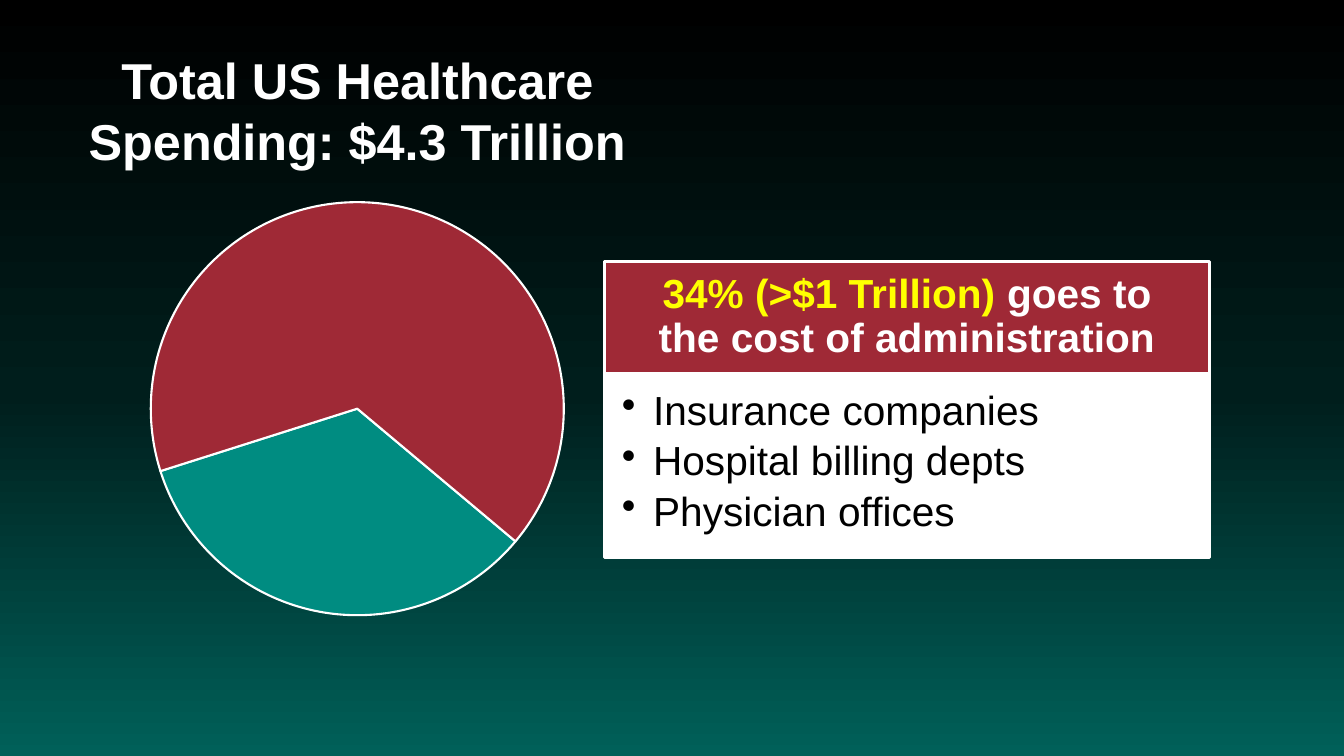
import copy
import pptx
import pptx.chart.data
import pptx.dml.color
import pptx.enum.chart
import pptx.enum.shapes
import pptx.enum.text
import pptx.oxml
import pptx.oxml.ns
import pptx.util
from pptx.util import Cm, Pt

COLORS = {
    "black": "000000",
    "deep_teal": "001E1C",
    "dark_teal": "006059",
    "teal": "008C81",
    "red": "9F2936",
    "yellow": "FFFF00",
    "white": "FFFFFF",
}


def rgb(name):
    return pptx.dml.color.RGBColor.from_string(COLORS[name])


def add_run(paragraph, text, color, size, bold):
    run = paragraph.add_run()
    run.text = text
    font_format = {"name": "Arial", "size": Pt(size), "bold": bold}
    for attribute, value in font_format.items():
        setattr(run.font, attribute, value)
    run.font.color.rgb = rgb(color)


presentation = pptx.Presentation()
presentation.slide_width = Cm(33.87)
presentation.slide_height = Cm(19.05)
slide = presentation.slides.add_slide(presentation.slide_layouts[6])

backdrop = slide.background.fill
backdrop.gradient()
backdrop.gradient_angle = 270
stop_list = slide.element.find(".//" + pptx.oxml.ns.qn("a:gsLst"))
stop_list.append(copy.deepcopy(stop_list[0]))
backdrop_stops = [(0, "black"), (0.52, "deep_teal"), (1, "dark_teal")]
for stop, (position, color) in zip(backdrop.gradient_stops, backdrop_stops):
    stop.position = position
    stop.color.rgb = rgb(color)

spending = pptx.chart.data.CategoryChartData()
spending.categories = ["1", "2"]
spending.add_series("Series 1", (34, 66))
spending_pie = slide.shapes.add_chart(
    pptx.enum.chart.XL_CHART_TYPE.PIE,
    Cm(0.61), Cm(4.75), Cm(16.79), Cm(11.1), spending,
).chart
spending_pie.has_legend = False
spending_pie.has_title = False
spending_pie.font.name = "Calibri"
spending_pie.font.size = Pt(10)
spending_pie.font.color.rgb = rgb("black")
pie_plot = spending_pie.plots[0]
pie_plot.vary_by_categories = False
for index, color in enumerate(["teal", "red"]):
    slice_format = pie_plot.series[0].points[index].format
    slice_format.fill.solid()
    slice_format.fill.fore_color.rgb = rgb(color)
    slice_format.line.color.rgb = rgb("white")
    slice_format.line.width = Pt(1.5)

pie_xml = spending_pie.element.find(".//" + pptx.oxml.ns.qn("c:pieChart"))
first_angle = pptx.oxml.parse_xml(
    f'<c:firstSliceAng {pptx.oxml.ns.nsdecls("c")} val="130"/>')
pie_xml.append(first_angle)
plot_area = pie_xml.getparent()
for old_layout in plot_area.findall(pptx.oxml.ns.qn("c:layout")):
    plot_area.remove(old_layout)
plot_area.insert(0, pptx.oxml.parse_xml(
    f'<c:layout {pptx.oxml.ns.nsdecls("c")}><c:manualLayout>'
    '<c:layoutTarget val="inner"/><c:xMode val="edge"/><c:yMode val="edge"/>'
    '<c:x val="0.19"/><c:y val="0.03"/><c:w val="0.62"/><c:h val="0.94"/>'
    '</c:manualLayout></c:layout>'))

panels = []
for top, height, color in [(6.6, 2.8, "red"), (9.4, 4.64, "white")]:
    panel = slide.shapes.add_shape(
        pptx.enum.shapes.MSO_SHAPE.RECTANGLE,
        Cm(15.24), Cm(top), Cm(15.24), Cm(height))
    panel.shadow.inherit = False
    panel.fill.solid()
    panel.fill.fore_color.rgb = rgb(color)
    panel.line.color.rgb = rgb("white")
    panel.line.width = Pt(2)
    panels.append(panel.text_frame)
cost_heading, cost_list = panels

title = slide.shapes.add_textbox(
    Cm(1.68), Cm(1.12), Cm(14.66), Cm(3.33)).text_frame
title.auto_size = pptx.enum.text.MSO_AUTO_SIZE.SHAPE_TO_FIT_TEXT

frame_formats = [
    (title, "TOP", (0.13, 0.13, 0.13, 0.13)),
    (cost_heading, "MIDDLE", (0.58, 0.33, 0.58, 0.33)),
    (cost_list, "TOP", (0.43, 0.43, 0.58, 0.64)),
]
for frame, anchor, (left, top, right, bottom) in frame_formats:
    frame_format = {
        "word_wrap": True,
        "vertical_anchor": getattr(pptx.enum.text.MSO_ANCHOR, anchor),
        "margin_left": Cm(left),
        "margin_top": Cm(top),
        "margin_right": Cm(right),
        "margin_bottom": Cm(bottom),
    }
    for attribute, value in frame_format.items():
        setattr(frame, attribute, value)

title_line = title.paragraphs[0]
title_line.alignment = pptx.enum.text.PP_ALIGN.CENTER
add_run(title_line, "Total US Healthcare Spending: $4.3 Trillion", "white", 36, True)

heading_line = cost_heading.paragraphs[0]
heading_line.alignment = pptx.enum.text.PP_ALIGN.CENTER
heading_line.line_spacing = 0.9
add_run(heading_line, "34% (>$1 Trillion) ", "yellow", 29, True)
add_run(heading_line, "goes to the cost of administration", "white", 29, True)

cost_places = ["Insurance companies", "Hospital billing depts", "Physician offices"]
for index, place in enumerate(cost_places):
    item = cost_list.add_paragraph() if index else cost_list.paragraphs[0]
    item.alignment = pptx.enum.text.PP_ALIGN.LEFT
    item.line_spacing = 0.9
    item.space_after = Pt(5)
    item.level = 1
    indent = item._p.get_or_add_pPr()
    indent.set("marL", str(Cm(0.79)))
    indent.set("indent", str(-Cm(0.79)))
    indent.append(pptx.oxml.parse_xml(
        f'<a:buChar {pptx.oxml.ns.nsdecls("a")} char="•"/>'))
    add_run(item, place, "black", 29, False)

presentation.save("out.pptx")
